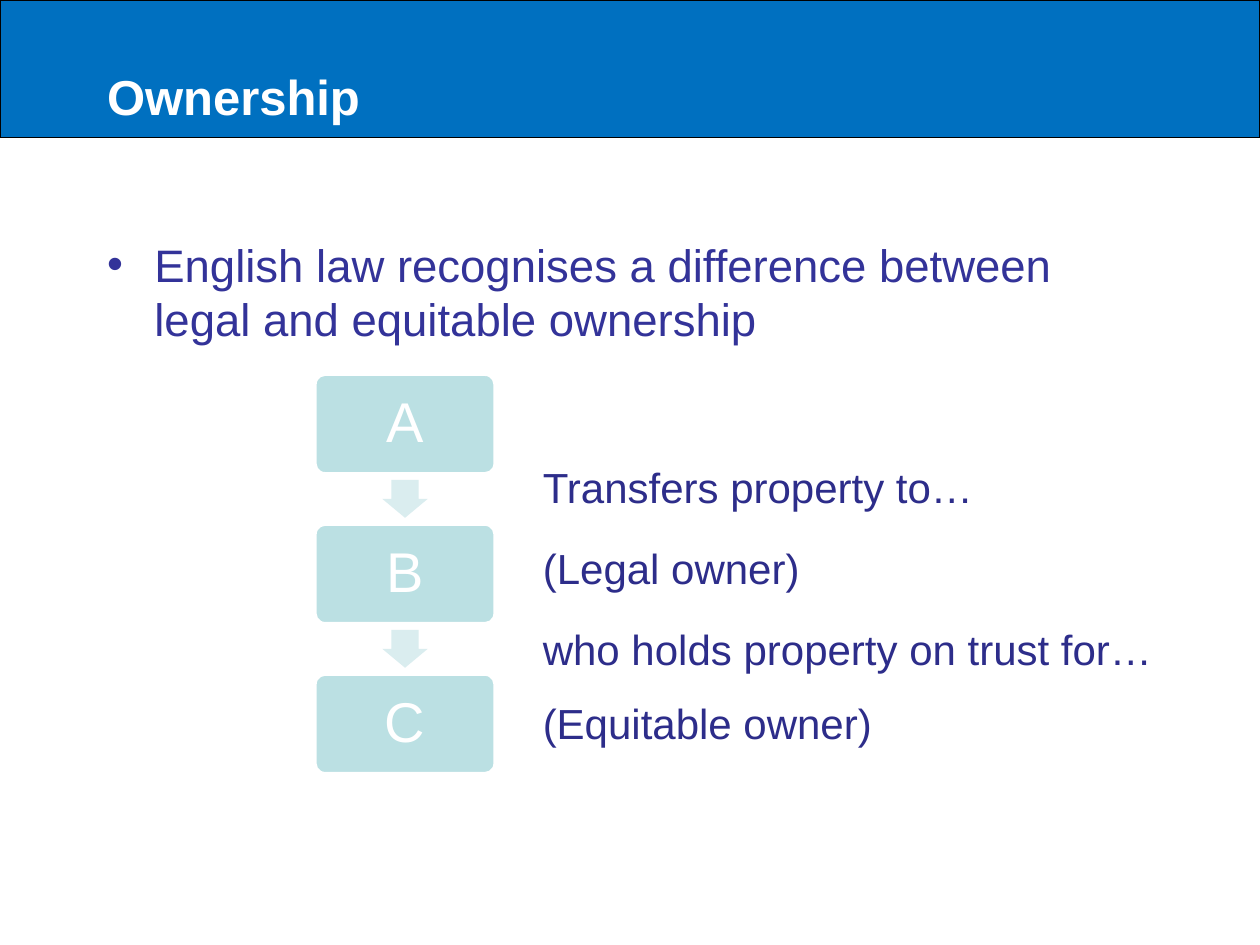
"""Build the slide on legal and equitable ownership."""
import dataclasses

import pptx
import pptx.dml.color
import pptx.enum.shapes
import pptx.enum.text
import pptx.util

Inches = pptx.util.Inches
Shape = pptx.enum.shapes.MSO_SHAPE
Align = pptx.enum.text.PP_ALIGN
Anchor = pptx.enum.text.MSO_ANCHOR


@dataclasses.dataclass(frozen=True)
class Theme:
    """Colours, font and type sizes."""
    font: str = "Arial"
    bar: str = "0070C0"
    edge: str = "000000"
    light: str = "FFFFFF"
    body: str = "333399"
    note: str = "2D2D8A"
    box: str = "BBE0E3"
    arrow: str = "DAEDEF"
    head_size: int = 28
    body_size: int = 26
    note_size: int = 24
    box_size: int = 32


def apply(target, values):
    """Set each named value on the target."""
    for name, value in values.items():
        setattr(target, name, value)


def paint(color):
    """Turn a hex string into a colour."""
    return pptx.dml.color.RGBColor.from_string(color)


class Deck:
    """Holds the style and the current slide."""

    def __init__(self, theme):
        """Open a deck with one title and content slide."""
        self.theme = theme
        self.file = pptx.Presentation()
        apply(self.file, {"slide_width": Inches(10), "slide_height": Inches(7.5)})
        self.slide = self.file.slides.add_slide(self.file.slide_layouts[1])

    def label(self, shape, text, size, color, bold=False, frame=None, para=None):
        """Put one styled paragraph into a shape."""
        apply(shape.text_frame, {"word_wrap": True, **(frame or {})})
        line = shape.text_frame.paragraphs[0]
        line.text = text
        apply(line, para or {})
        apply(line.font, {"name": self.theme.font, "size": pptx.util.Pt(size), "bold": bold})
        line.font.color.rgb = paint(color)

    def place(self, index, area, text, size, color, **style):
        """Move and fill a placeholder."""
        holder = self.slide.placeholders[index]
        apply(holder, dict(zip(("left", "top", "width", "height"), map(Inches, area))))
        self.label(holder, text, size, color, **style)

    def shape(self, kind, area, fill, edge=None, width=0, adjust=()):
        """Add a flat preset shape."""
        shape = self.slide.shapes.add_shape(kind, *map(Inches, area))
        shape.shadow.inherit = False
        shape.fill.solid()
        shape.fill.fore_color.rgb = paint(fill)
        for index, value in enumerate(adjust):
            shape.adjustments[index] = value
        if edge:
            shape.line.color.rgb = paint(edge)
            shape.line.width = pptx.util.Pt(width)
        else:
            shape.line.fill.background()
        return shape

    def bar(self, area):
        """Add the title bar behind all else."""
        bar = self.shape(Shape.RECTANGLE, area, self.theme.bar, self.theme.edge, 0.75)
        self.slide.shapes._spTree.insert(2, bar._element)

    def box(self, area, text):
        """Add a rounded box with a letter."""
        theme = self.theme
        box = self.shape(Shape.ROUNDED_RECTANGLE, area, theme.box, theme.light, 2, (0.1,))
        self.label(box, text, theme.box_size, theme.light,
                   frame={"vertical_anchor": Anchor.MIDDLE},
                   para={"alignment": Align.CENTER, "line_spacing": 0.9})

    def arrow(self, area):
        """Add an arrow that points down."""
        self.shape(Shape.DOWN_ARROW, area, self.theme.arrow, adjust=(0.6, 0.5))

    def note(self, area, text):
        """Add a line of text beside the boxes."""
        note = self.slide.shapes.add_textbox(*map(Inches, area))
        self.label(note, text, self.theme.note_size, self.theme.note)


def main():
    """Draw the slide and save it."""
    theme = Theme()
    deck = Deck(theme)
    deck.bar((0, 0, 10, 1.09))
    deck.place(0, (0.75, 0.47, 8.42, 0.58), "Ownership", theme.head_size, theme.light,
               bold=True, frame={"vertical_anchor": Anchor.MIDDLE},
               para={"alignment": Align.LEFT})
    deck.place(1, (0.75, 1.78, 8.5, 4.5),
               "English law recognises a difference between legal and equitable ownership",
               theme.body_size, theme.body, frame={"margin_top": Inches(0.1)},
               para={"space_before": pptx.util.Pt(0)})

    left, top, wide, high, step = 2.5, 2.97, 1.43, 0.79, 1.19
    span, drop = 0.36, 0.3
    for row, name in enumerate("ABC"):
        head = top + row * step
        if row:
            gap = step - high
            deck.arrow((left + (wide - span) / 2, head - (gap + drop) / 2, span, drop))
        deck.box((left, head, wide, high), name)

    notes = (
        (3.61, 3.62, "Transfers property to…"),
        (4.26, 2.39, "(Legal owner)"),
        (4.9, 5.27, "who holds property on trust for…"),
        (5.49, 2.83, "(Equitable owner)"),
    )
    for head, width, text in notes:
        deck.note((4.21, head, width, 0.5), text)
    deck.file.save("out.pptx")


if __name__ == "__main__":
    main()
